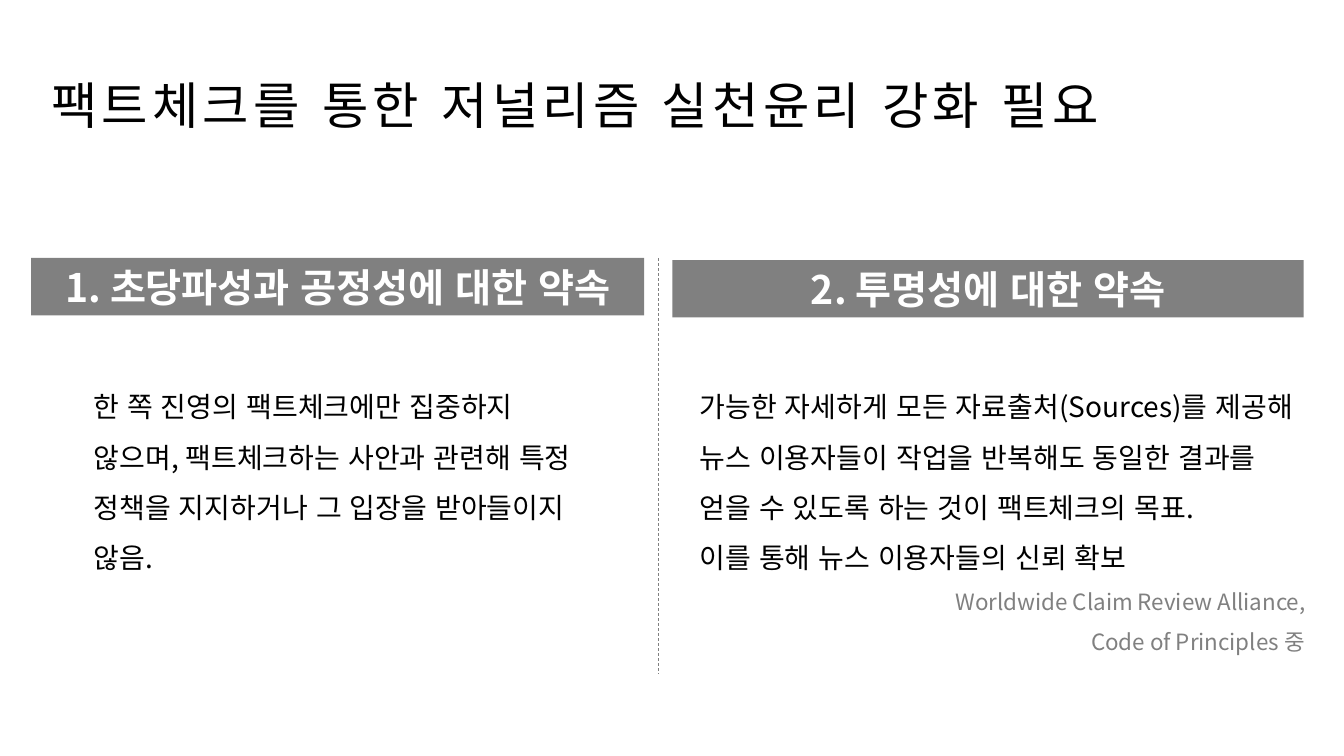
from dataclasses import dataclass

import pptx
import pptx.dml.color
import pptx.enum.dml
import pptx.enum.shapes
import pptx.enum.text
import pptx.oxml
import pptx.oxml.ns
import pptx.util
from pptx.util import Inches

ALIGN = pptx.enum.text.PP_ALIGN
ANCHOR = pptx.enum.text.MSO_ANCHOR


@dataclass(frozen=True)
class Theme:
    title_font: str = "Arial"
    body_font: str = "Noto Sans CJK KR"
    east_asian_font: str = "Arial"
    ink: str = "000000"
    gray: str = "808080"
    white: str = "FFFFFF"
    title_size: int = 36
    heading_size: int = 28
    body_size: int = 20
    source_size: int = 16
    title_tracking: int = 300


THEME = Theme()


def rgb(value):
    return pptx.dml.color.RGBColor.from_string(value)


def style(paragraph, font_name, size, color, bold=False, tracking=None):
    font = paragraph.font
    font.name = font_name
    font.size = pptx.util.Pt(size)
    font.bold = bold
    font.color.rgb = rgb(color)
    defaults = paragraph._p.pPr.find(pptx.oxml.ns.qn("a:defRPr"))
    east_asian = pptx.oxml.parse_xml(
        f'<a:ea {pptx.oxml.ns.nsdecls("a")} typeface="{THEME.east_asian_font}"/>')
    defaults.find(pptx.oxml.ns.qn("a:latin")).addnext(east_asian)
    if tracking:
        defaults.set("spc", str(tracking))


def prepare_frame(shape, anchor):
    frame = shape.text_frame
    frame.word_wrap = True
    frame.auto_size = pptx.enum.text.MSO_AUTO_SIZE.SHAPE_TO_FIT_TEXT
    frame.vertical_anchor = anchor
    return frame


def add_title(slide, box, wording):
    frame = prepare_frame(slide.shapes.add_textbox(*map(Inches, box)), ANCHOR.MIDDLE)
    frame.margin_left = frame.margin_right = Inches(0.03)
    frame.margin_top = frame.margin_bottom = Inches(0.03)
    title = frame.paragraphs[0]
    title.text = wording
    title.line_spacing = 0.9
    style(title, THEME.title_font, THEME.title_size, THEME.ink, tracking=THEME.title_tracking)


def add_principle(slide, box, heading, explanation, body_offset, body_size, source=()):
    left, top, width, height = box
    banner = slide.shapes.add_shape(
        pptx.enum.shapes.MSO_SHAPE.RECTANGLE, *map(Inches, box))
    banner.shadow.inherit = False
    banner.fill.solid()
    banner.fill.fore_color.rgb = rgb(THEME.gray)
    banner.line.fill.background()
    heading_line = prepare_frame(banner, ANCHOR.TOP).paragraphs[0]
    heading_line.text = heading
    heading_line.alignment = ALIGN.CENTER
    style(heading_line, THEME.body_font, THEME.heading_size, THEME.white, bold=True)

    body_box = (left + body_offset[0], top + body_offset[1], *body_size)
    frame = prepare_frame(slide.shapes.add_textbox(*map(Inches, body_box)), ANCHOR.TOP)
    body = frame.paragraphs[0]
    body.text = explanation
    body.line_spacing = 1.5
    style(body, THEME.body_font, THEME.body_size, THEME.ink)
    for wording in source:
        credit = frame.add_paragraph()
        credit.text = wording
        credit.alignment = ALIGN.RIGHT
        credit.line_spacing = 1.5
        style(credit, THEME.body_font, THEME.source_size, THEME.gray)


def add_divider(slide, x, top, bottom):
    divider = slide.shapes.add_connector(
        pptx.enum.shapes.MSO_CONNECTOR.STRAIGHT,
        Inches(x), Inches(top), Inches(x), Inches(bottom))
    divider.line.color.rgb = rgb(THEME.gray)
    divider.line.width = pptx.util.Pt(0.5)
    divider.line.dash_style = pptx.enum.dml.MSO_LINE.DASH
    divider._element.spPr.append(
        pptx.oxml.parse_xml(f'<a:effectLst {pptx.oxml.ns.nsdecls("a")}/>'))


def main():
    presentation = pptx.Presentation()
    presentation.slide_width = Inches(13.33)
    presentation.slide_height = Inches(7.5)
    slide = presentation.slides.add_slide(presentation.slide_layouts[6])

    add_title(slide, (0.48, 0.77, 12.81, 0.6), "팩트체크를 통한 저널리즘 실천윤리 강화 필요")
    add_principle(
        slide, (0.31, 2.56, 6.08, 0.57),
        "1. 초당파성과 공정성에 대한 약속",
        "한 쪽 진영의 팩트체크에만 집중하지 않으며, 팩트체크하는 사안과 관련해 "
        "특정 정책을 지지하거나 그 입장을 받아들이지 않음.",
        body_offset=(0.52, 1.09), body_size=(5.04, 1.62))
    add_principle(
        slide, (6.67, 2.58, 6.26, 0.57),
        "2. 투명성에 대한 약속",
        "가능한 자세하게 모든 자료출처(Sources)를 제공해\n"
        "뉴스 이용자들이 작업을 반복해도 동일한 결과를 "
        "얻을 수 있도록 하는 것이 팩트체크의 목표. \n"
        "이를 통해 뉴스 이용자들의 신뢰 확보",
        body_offset=(0.17, 1.07), body_size=(6.26, 3.43),
        source=("Worldwide Claim Review Alliance, ", "Code of Principles 중 "))
    add_divider(slide, 6.53, 2.56, 6.68)

    presentation.save("out.pptx")


if __name__ == "__main__":
    main()
